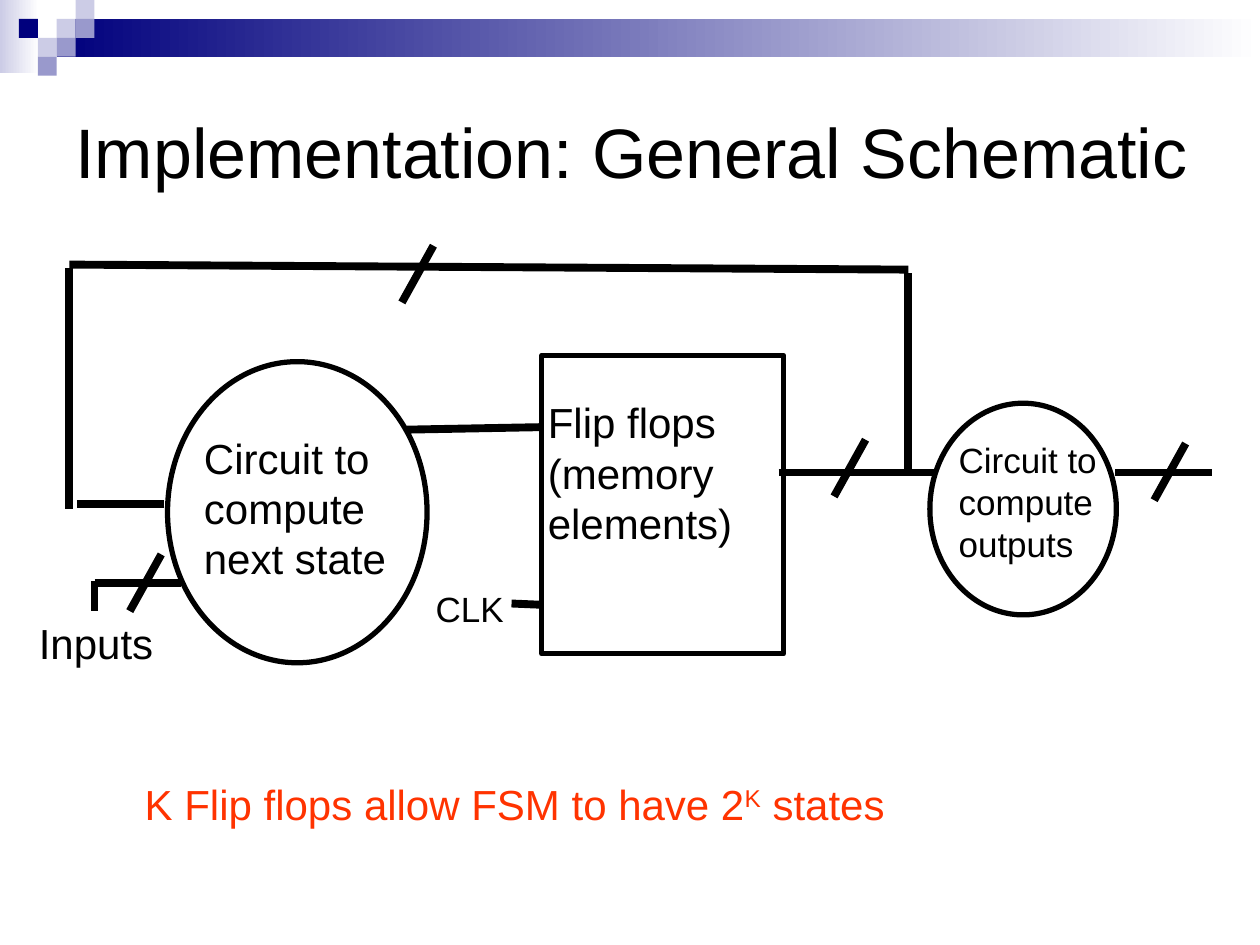
"""Build the general schematic slide of a finite state machine."""
from lxml import etree
from pptx import Presentation
from pptx.dml.color import RGBColor
from pptx.enum.shapes import MSO_CONNECTOR, MSO_SHAPE
from pptx.enum.text import MSO_ANCHOR, MSO_AUTO_SIZE, PP_ALIGN
from pptx.oxml.ns import qn
from pptx.util import Inches, Pt

RECTANGLE, OVAL = MSO_SHAPE.RECTANGLE, MSO_SHAPE.OVAL
STRAIGHT = MSO_CONNECTOR.STRAIGHT
LEFT, MIDDLE, TOP = PP_ALIGN.LEFT, MSO_ANCHOR.MIDDLE, MSO_ANCHOR.TOP
FIT_SHAPE = MSO_AUTO_SIZE.SHAPE_TO_FIT_TEXT

THEME = {
    "font": "Arial",
    "ink": "000000", "note": "FF3300", "paper": "FFFFFF",
    "navy": "00007D", "mid": "9999CC", "pale": "CCCCE6",
    "title": 40, "label": 24, "small": 20,
    "outline": 3, "wire": 4.5,
}

TITLE = "Implementation: General Schematic"
TITLE_BOX = (0.5, 0.5, 9.8, 1.39)

BANDS = [((0, 0, 0.31, 0.58), "pale"), ((0.45, 0.15, 9.55, 0.3), "navy")]
TILE = 0.15
TILES = [
    (3, 1, "pale"), (4, 0, "pale"), (4, 1, "mid"), (2, 2, "pale"),
    (1, 1, "navy"), (3, 2, "mid"), (2, 3, "mid"),
]

BLOCKS = [
    (OVAL, (1.33, 2.87, 2.06, 2.39)),
    (RECTANGLE, (4.3, 2.82, 1.92, 2.37)),
    (OVAL, (7.38, 3.2, 1.48, 1.68)),
]

WIRES = [
    (3.23, 3.41, 4.31, 3.39),
    (7.21, 3.75, 7.21, 2.17),
    (0.55, 2.13, 0.55, 4.04),
    (0.61, 4, 1.3, 4),
    (0.55, 2.1, 7.21, 2.14),
    (6.18, 3.75, 7.41, 3.75),
    (8.85, 3.75, 9.62, 3.75),
    (0.75, 4.63, 1.44, 4.63),
    (0.75, 4.61, 0.75, 4.85),
    (4.06, 4.79, 4.3, 4.8),
]
BUS_MARKS = [(6.87, 3.49), (3.44, 1.95), (9.41, 3.52), (1.28, 4.4)]
MARK_RUN, MARK_DROP = 0.25, 0.45

LABELS = [
    ((0.21, 4.85, 1.11, 0.5), "label", [["Inputs"]]),
    ((1.52, 3.38, 1.65, 1.3), "label", [["Circuit to ", "compute"], ["next state"]]),
    ((4.25, 3.1, 1.7, 1.3), "label", [["Flip flops", "(memory", "elements)"]]),
    ((7.51, 3.43, 1.3, 1.1), "small", [["Circuit to", "compute", "outputs"]]),
    ((3.36, 4.61, 0.74, 0.43), "small", [["CLK"]]),
]
NOTE_BOX = (1.05, 6.13, 6.19, 0.5)
NOTE = [("K Flip flops allow FSM to have 2", False), ("K", True), (" states", False)]


def color(name):
    return RGBColor.from_string(THEME[name])


def inches(values):
    return [Inches(value) for value in values]


def add_run(paragraph, text, size, ink="ink"):
    run = paragraph.add_run()
    run.text = text
    run.font.name = THEME["font"]
    run.font.size = Pt(THEME[size])
    run.font.color.rgb = color(ink)
    return run


def add_block(slide, kind, box):
    block = slide.shapes.add_shape(kind, *inches(box))
    block.shadow.inherit = False
    return block


def add_tile(slide, box, fill):
    tile = add_block(slide, RECTANGLE, box)
    tile.line.fill.background()
    tile.fill.solid()
    tile.fill.fore_color.rgb = color(fill)


def add_band(slide, box, start):
    band = add_block(slide, RECTANGLE, box)
    band.line.fill.background()
    band.fill.gradient()
    band.fill.gradient_angle = 0
    for stop, position, name in zip(band.fill.gradient_stops, (0, 1), (start, "paper")):
        stop.position = position
        stop.color.rgb = color(name)


def add_outline(slide, kind, box):
    block = add_block(slide, kind, box)
    block.fill.background()
    block.line.color.rgb = color("ink")
    block.line.width = Pt(THEME["outline"])


def add_wire(slide, ends):
    wire = slide.shapes.add_connector(STRAIGHT, *inches(ends))
    wire.line.color.rgb = color("ink")
    wire.line.width = Pt(THEME["wire"])
    etree.SubElement(wire._element.spPr, qn("a:effectLst"))


def add_text_frame(slide, box):
    frame = slide.shapes.add_textbox(*inches(box)).text_frame
    frame.word_wrap = False
    frame.auto_size = FIT_SHAPE
    frame.vertical_anchor = TOP
    return frame


def add_label(slide, box, size, paragraphs):
    frame = add_text_frame(slide, box)
    for index, lines in enumerate(paragraphs):
        paragraph = frame.add_paragraph() if index else frame.paragraphs[0]
        for number, line in enumerate(lines):
            if number:
                paragraph.add_line_break()
            add_run(paragraph, line, size)


def add_note(slide):
    paragraph = add_text_frame(slide, NOTE_BOX).paragraphs[0]
    for text, raised in NOTE:
        run = add_run(paragraph, text, "label", "note")
        if raised:
            run._r.get_or_add_rPr().set("baseline", "30000")


def set_title(slide):
    title = slide.shapes.title
    title.left, title.top, title.width, title.height = inches(TITLE_BOX)
    title.text_frame.vertical_anchor = MIDDLE
    paragraph = title.text_frame.paragraphs[0]
    paragraph.alignment = LEFT
    add_run(paragraph, TITLE, "title")


def main():
    deck = Presentation()
    deck.slide_width, deck.slide_height = Inches(10), Inches(7.5)
    slide = deck.slides.add_slide(deck.slide_layouts[5])
    for box, start in BANDS:
        add_band(slide, box, start)
    for column, row, fill in TILES:
        add_tile(slide, (column * TILE, row * TILE, TILE, TILE), fill)
    set_title(slide)
    for kind, box in BLOCKS:
        add_outline(slide, kind, box)
    marks = [(x, y, x - MARK_RUN, y + MARK_DROP) for x, y in BUS_MARKS]
    for ends in WIRES + marks:
        add_wire(slide, ends)
    for box, size, paragraphs in LABELS:
        add_label(slide, box, size, paragraphs)
    add_note(slide)
    deck.save("out.pptx")


if __name__ == "__main__":
    main()
